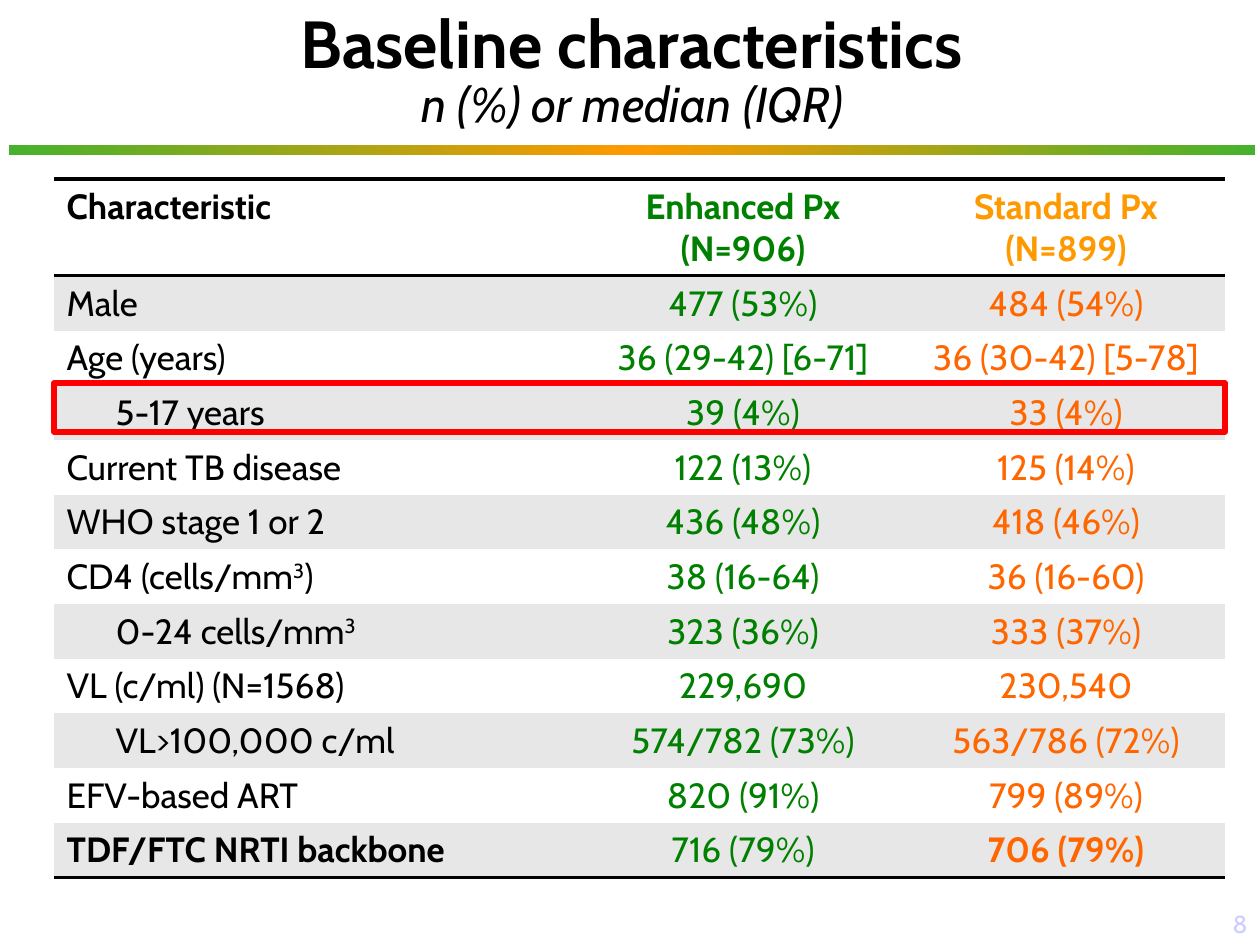
"""Build the baseline characteristics slide of a two-arm trial."""
from copy import deepcopy

from lxml.etree import SubElement
from pptx import Presentation
from pptx.dml.color import RGBColor
from pptx.enum.shapes import MSO_SHAPE as SHAPE
from pptx.enum.text import MSO_ANCHOR as ANCHOR, PP_ALIGN as ALIGN
from pptx.oxml.ns import qn
from pptx.util import Pt

PX = 914400 / 126
FONT = "Cabin"
PLAIN_TABLE = "{2D5ABB26-0587-4C30-8999-92F81FD0307C}"
BLACK = RGBColor(0x00, 0x00, 0x00)
WHITE = RGBColor(0xFF, 0xFF, 0xFF)
GREY = RGBColor(0xE7, 0xE7, 0xE7)
GREEN = RGBColor(0x00, 0x80, 0x00)
ORANGE = RGBColor(0xFF, 0x66, 0x00)
AMBER = RGBColor(0xFF, 0x99, 0x00)
LEAF = RGBColor(0x46, 0xB2, 0x2C)
RED = RGBColor(0xFF, 0x00, 0x00)
LAVENDER = RGBColor(0xCC, 0xCC, 0xFF)

COLUMNS = (525, 328, 318)
HEADER_HEIGHT, ROW_HEIGHT = 97, 54
INDENT = 49
HEADER = ("Characteristic", "Enhanced Px\n(N=906)", "Standard Px\n(N=899)")
ROWS = (
    ("Male", "477 (53%)", "484 (54%)"),
    ("Age (years)", "36 (29-42) [6-71]", "36 (30-42) [5-78]"),
    ("5-17 years", "39 (4%)", "33 (4%)"),
    ("Current TB disease", "122 (13%)", "125 (14%)"),
    ("WHO stage 1 or 2", "436 (48%)", "418 (46%)"),
    ("CD4 (cells/mm^3^)", "38 (16-64)", "36 (16-60)"),
    ("0-24 cells/mm^3", "323 (36%)", "333 (37%)"),
    ("VL (c/ml) (N=1568)", "229,690", "230,540"),
    ("VL>100,000 c/ml", "574/782 (73%)", "563/786 (72%)"),
    ("EFV-based ART", "820 (91%)", "799 (89%)"),
    ("TDF/FTC NRTI backbone", "716 (79%)", "706 (79%)"),
)
SUBROWS = {"5-17 years", "0-24 cells/mm^3", "VL>100,000 c/ml"}
BOLD_CELLS = {"TDF/FTC NRTI backbone", "706 (79%)"}


def emu(*lengths):
    """Turn px lengths into EMU."""
    return [round(n * PX) for n in lengths]


def add_text(p, text, size=20, color=BLACK, bold=False, italic=False, align=ALIGN.LEFT):
    """Add text to a paragraph, with newlines as breaks and ^ toggling superscript."""
    p.alignment = align
    for n, line in enumerate(text.split("\n")):
        if n:
            p.add_line_break()
        for k, part in enumerate(line.split("^")):
            if not part:
                continue
            r = p.add_run()
            r.text = part
            r.font.name, r.font.size = FONT, Pt(size)
            r.font.bold, r.font.italic = bold, italic
            r.font.color.rgb = color
            if k % 2:
                r._r.get_or_add_rPr().set("baseline", "30000")


def add_box(slide, box, anchor):
    """Add a wrapping text box and return its first paragraph."""
    tf = slide.shapes.add_textbox(*emu(*box)).text_frame
    tf.word_wrap = True
    tf.vertical_anchor = anchor
    return tf.paragraphs[0]


def add_title(slide, box):
    """Add the title with its italic second line."""
    p = add_box(slide, box, ANCHOR.MIDDLE)
    p.line_spacing = 0.85
    add_text(p, "Baseline characteristics", size=38, bold=True, align=ALIGN.CENTER)
    p.add_line_break()
    add_text(p, "n (%) or median (IQR)", size=28, italic=True, align=ALIGN.CENTER)


def add_rule(slide, box):
    """Add the green-amber-green bar below the title."""
    sp = slide.shapes.add_shape(SHAPE.RECTANGLE, *emu(*box))
    sp.shadow.inherit = False
    sp.line.fill.background()
    sp.fill.gradient()
    sp.fill.gradient_angle = 0
    stops = sp._element.spPr.find(".//" + qn("a:gsLst"))
    stops.append(deepcopy(stops[0]))
    for n, (stop, color) in enumerate(zip(sp.fill.gradient_stops, (LEAF, AMBER, LEAF))):
        stop.position = n / 2
        stop.color.rgb = color


def add_border(cell, side):
    """Draw a 2 pt black border on the T or B side of a cell."""
    ln = SubElement(cell._tc.get_or_add_tcPr(), qn("a:ln" + side), w=str(Pt(2)))
    fill = SubElement(ln, qn("a:solidFill"))
    SubElement(fill, qn("a:srgbClr"), val=str(BLACK))


def fill_row(table, row, texts, colors, bold=False, borders=""):
    """Write and format one row of the table."""
    for col, (text, color) in enumerate(zip(texts, colors)):
        cell = table.cell(row, col)
        for side in borders:
            add_border(cell, side)
        cell.fill.solid()
        cell.fill.fore_color.rgb = GREY if row % 2 else WHITE
        p = cell.text_frame.paragraphs[0]
        if text in SUBROWS:
            p._p.get_or_add_pPr().set("marL", str(emu(INDENT)[0]))
        add_text(p, text, color=color, bold=bold or text in BOLD_CELLS,
                 align=ALIGN.CENTER if col else ALIGN.LEFT)


def add_characteristics(slide, left, top):
    """Add the table of characteristics by trial arm."""
    heights = [HEADER_HEIGHT] + [ROW_HEIGHT] * len(ROWS)
    box = emu(left, top, sum(COLUMNS), sum(heights))
    table = slide.shapes.add_table(len(heights), len(COLUMNS), *box).table
    table._tbl.tblPr.find(qn("a:tableStyleId")).text = PLAIN_TABLE
    for column, width in zip(table.columns, emu(*COLUMNS)):
        column.width = width
    for row, height in zip(table.rows, emu(*heights)):
        row.height = height
    fill_row(table, 0, HEADER, (BLACK, GREEN, AMBER), bold=True, borders="TB")
    for n, texts in enumerate(ROWS, 1):
        fill_row(table, n, texts, (BLACK, GREEN, ORANGE),
                 borders="B" if n == len(ROWS) else "")


def add_highlight(slide, box):
    """Add the red frame around the row of children."""
    sp = slide.shapes.add_shape(SHAPE.RECTANGLE, *emu(*box))
    sp.shadow.inherit = False
    sp.fill.background()
    sp.line.color.rgb = RED
    sp.line.width = Pt(3)


def main():
    """Build and save the slide."""
    prs = Presentation()
    prs.slide_width, prs.slide_height = emu(1260, 945)
    slide = prs.slides.add_slide(prs.slide_layouts[6])
    add_rule(slide, (9, 145, 1246, 10))
    add_title(slide, (123, 31, 1018, 85))
    add_characteristics(slide, 54, 179)
    add_text(add_box(slide, (1134, 882, 126, 63), ANCHOR.BOTTOM), "8",
             size=14, color=LAVENDER, align=ALIGN.RIGHT)
    add_highlight(slide, (54, 383, 1171, 49))
    prs.save("out.pptx")


if __name__ == "__main__":
    main()
